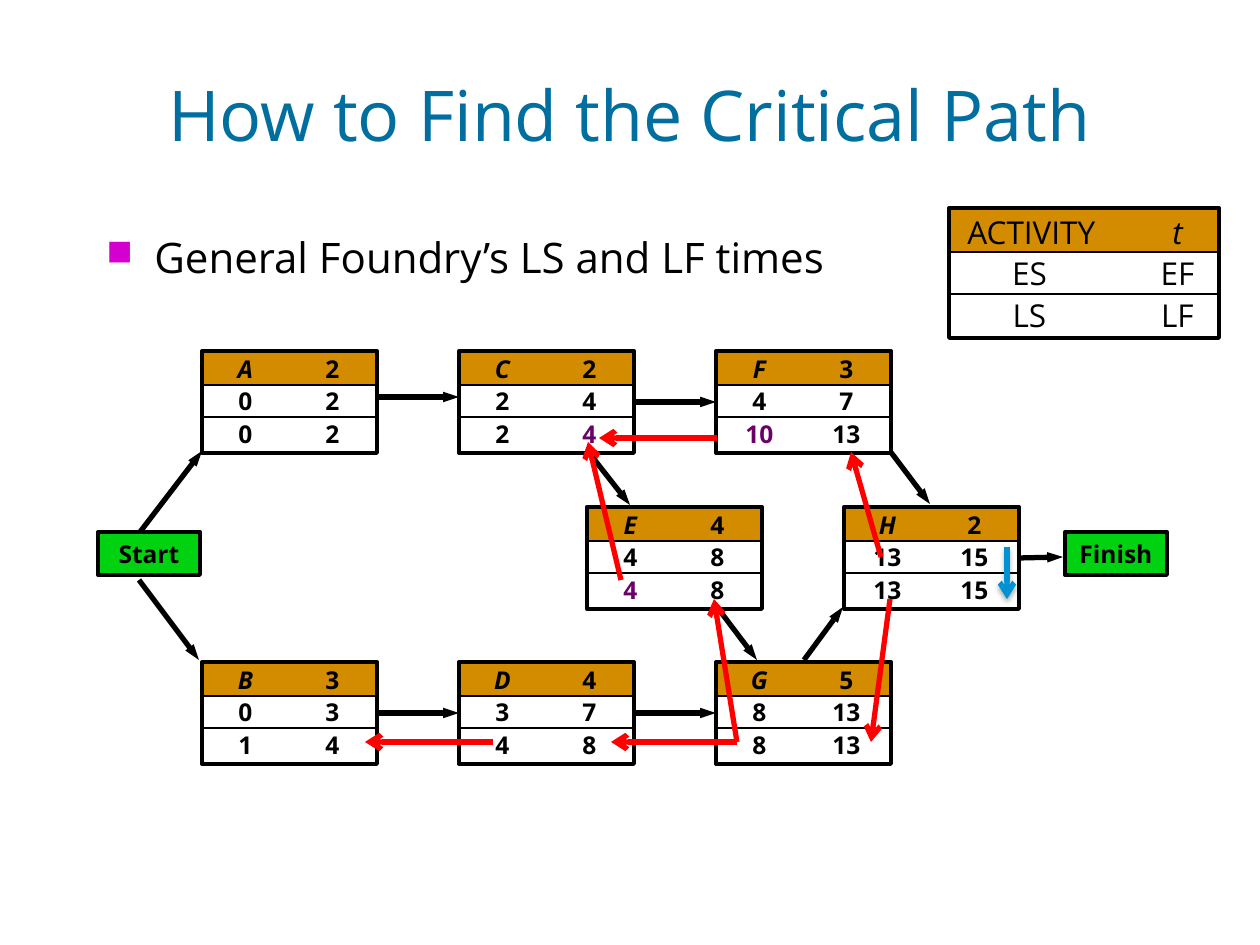
from lxml import etree
from pptx import Presentation
from pptx.dml.color import RGBColor
from pptx.enum.shapes import MSO_CONNECTOR, MSO_SHAPE
from pptx.enum.text import MSO_ANCHOR, PP_ALIGN
from pptx.oxml.ns import qn
from pptx.util import Emu, Pt

STRAIGHT = MSO_CONNECTOR.STRAIGHT
RECTANGLE = MSO_SHAPE.RECTANGLE
MIDDLE = MSO_ANCHOR.MIDDLE
CENTER = PP_ALIGN.CENTER
FONT = "Open Sans"
BLACK, ORANGE, GREEN, PURPLE = "000000", "D38B00", "00D211", "6A0068"
RED, BLUE, TEAL, MAGENTA = "FF0000", "0092D3", "006E9E", "D300D0"
LEFT, RIGHT = 1, 3

TITLE = "How to Find the Critical Path"
BULLET = "General Foundry’s LS and LF times"
# name: (column, row, cells)
ACTIVITIES = {
    "A": (0, 0, [("A", "2"), ("0", "2"), ("0", "2")]),
    "C": (2, 0, [("C", "2"), ("2", "4"), ("2", "4")]),
    "H": (5, 1, [("H", "2"), ("13", "15"), ("13", "15")]),
    "E": (3, 1, [("E", "4"), ("4", "8"), ("4", "8")]),
    "B": (0, 2, [("B", "3"), ("0", "3"), ("1", "4")]),
    "D": (2, 2, [("D", "4"), ("3", "7"), ("4", "8")]),
    "G": (4, 2, [("G", "5"), ("8", "13"), ("8", "13")]),
    "F": (4, 0, [("F", "3"), ("4", "7"), ("10", "13")]),
}
HIGHLIGHTS = {"C": (2, 1), "E": (2, 0), "F": (2, 0)}
LEGEND = [("ACTIVITY", "t"), ("ES", "EF"), ("LS", "LF")]
TERMINALS = [("Start", 98), ("Finish", 1065)]
JOINS = [("C", "F"), ("B", "D"), ("D", "G")]
FORWARD_ARROWS = [
    (140, 532, 202, 451), (139, 580, 199, 660), (377, 397, 459, 397),
    (590, 454, 630, 505), (717, 607, 757, 660), (890, 451, 930, 504),
    (804, 660, 843, 607),
]
FINISH_ARROW = (1019, 557, 1063, 557)
BACKWARD_ARROWS = [
    (890, 599, 871, 742), (737, 742, 611, 742), (493, 742, 365, 742),
    (737, 742, 714, 599), (881, 557, 851, 452), (621, 580, 588, 442),
    (717, 438, 599, 438),
]
LATEST_ARROW = (1007, 547, 1007, 599)
NODE_STYLE = dict(width=175, height=102, rules=(34, 66), size=14, tabs=(24, 111),
                  text_box=(7, -6, 156, 111), bold=True, italic=(0, 0))
LEGEND_STYLE = dict(width=270, height=130, rules=(44, 86), size=18, tabs=(62, 210),
                    text_box=(6, -5, 258, 137), bold=False, italic=(0, 1))


def px(value):
    return Emu(round(value * 914400 / 126))


def color(value):
    return RGBColor.from_string(value)


def set_font(font, size, value, bold=False):
    font.name, font.size, font.bold = FONT, Pt(size), bold
    font.color.rgb = color(value)


def add_box(slide, left, top, width, height, fill=None, outlined=False):
    shape = slide.shapes.add_shape(RECTANGLE, px(left), px(top), px(width), px(height))
    shape.shadow.inherit = False
    if fill:
        shape.fill.solid()
        shape.fill.fore_color.rgb = color(fill)
    else:
        shape.fill.background()
    if outlined:
        shape.line.color.rgb = color(BLACK)
        shape.line.width = Pt(2.25)
    else:
        shape.line.fill.background()
    return shape


def add_text_box(slide, left, top, width, height):
    frame = slide.shapes.add_textbox(px(left), px(top), px(width), px(height)).text_frame
    frame.word_wrap = True
    return frame


def add_line(slide, points, value=BLACK, width=1.5, head=None, head_width="med"):
    line = slide.shapes.add_connector(STRAIGHT, *map(px, points))
    line.line.color.rgb = color(value)
    line.line.width = Pt(width)
    if head:
        etree.SubElement(line.line._get_or_add_ln(), qn("a:tailEnd"),
                         type=head, w=head_width, len="med")
    etree.SubElement(line._element.spPr, qn("a:effectLst"))
    return line


def add_shadow(line):
    effects = line._element.spPr.find(qn("a:effectLst"))
    shadow = etree.SubElement(effects, qn("a:outerShdw"), blurRad=str(Pt(3.1)),
                              dist=str(Pt(1.8)), dir="5400000", rotWithShape="0")
    shade = etree.SubElement(shadow, qn("a:srgbClr"), val=BLACK)
    etree.SubElement(shade, qn("a:alpha"), val="35000")


def add_card(slide, left, top, cells, style, highlight=None):
    width, rules = style["width"], style["rules"]
    add_box(slide, left, top, width, rules[0], ORANGE)
    dx, dy, text_width, text_height = style["text_box"]
    frame = add_text_box(slide, left + dx, top + dy, text_width, text_height)
    for row, values in enumerate(cells):
        paragraph = frame.paragraphs[0] if row == 0 else frame.add_paragraph()
        paragraph.line_spacing = 1.1
        tabs = etree.SubElement(paragraph._p.get_or_add_pPr(), qn("a:tabLst"))
        for position in style["tabs"]:
            etree.SubElement(tabs, qn("a:tab"), pos=str(px(position)), algn="ctr")
        set_font(paragraph.font, style["size"], BLACK, style["bold"])
        for column, value in enumerate(values):
            run = paragraph.add_run()
            run.text = "\t" + value
            if (row, column) == style["italic"]:
                run.font.italic = True
            if (row, column) == highlight:
                run.font.color.rgb = color(PURPLE)
    frame_box = add_box(slide, left, top, width, style["height"], outlined=True)
    for rule in rules:
        add_line(slide, (left, top + rule, left + width, top + rule))
    return frame_box


def add_headings(slide):
    frame = add_text_box(slide, 94, 54, 1071, 130)
    frame.vertical_anchor = MIDDLE
    paragraph = frame.paragraphs[0]
    paragraph.text, paragraph.alignment, paragraph.line_spacing = TITLE, CENTER, 0.9
    set_font(paragraph.font, 40, TEAL)

    paragraph = add_text_box(slide, 94, 231, 1071, 67).paragraphs[0]
    paragraph.text, paragraph.line_spacing = BULLET, 0.9
    properties = paragraph._p.get_or_add_pPr()
    properties.set("marL", str(px(48)))
    properties.set("indent", str(px(-48)))
    bullet_color = etree.SubElement(properties, qn("a:buClr"))
    etree.SubElement(bullet_color, qn("a:srgbClr"), val=MAGENTA)
    etree.SubElement(properties, qn("a:buSzPct"), val="85000")
    etree.SubElement(properties, qn("a:buChar"), char="■")
    set_font(paragraph.font, 24, BLACK)


def main():
    """Build the critical path slide."""
    presentation = Presentation()
    presentation.slide_width, presentation.slide_height = px(1260), px(945)
    slide = presentation.slides.add_slide(presentation.slide_layouts[6])
    add_headings(slide)

    nodes = {}
    for name, (column, row, cells) in ACTIVITIES.items():
        left, top = round(202 + 128.4 * column), round(351 + 155.6 * row)
        nodes[name] = add_card(slide, left, top, cells, NODE_STYLE, HIGHLIGHTS.get(name))
    for label, left in TERMINALS:
        box = add_box(slide, left, 532, 102, 43, GREEN, outlined=True)
        box.text_frame.word_wrap = False
        box.text_frame.vertical_anchor = MIDDLE
        paragraph = box.text_frame.paragraphs[0]
        paragraph.text, paragraph.alignment = label, CENTER
        set_font(paragraph.font, 14, BLACK, bold=True)

    for points in FORWARD_ARROWS:
        add_line(slide, points, BLACK, 3, "triangle", "sm")
    for start, end in JOINS:
        arrow = add_line(slide, (0, 0, 0, 0), BLACK, 3, "triangle", "sm")
        arrow.begin_connect(nodes[start], RIGHT)
        arrow.end_connect(nodes[end], LEFT)
    finish_arrow = add_line(slide, FINISH_ARROW, BLACK, 3, "triangle", "sm")
    finish_arrow.begin_connect(nodes["H"], RIGHT)

    add_shadow(add_line(slide, LATEST_ARROW, BLUE, 3, "arrow"))
    for points in BACKWARD_ARROWS:
        add_line(slide, points, RED, 3, "arrow")
    add_card(slide, 949, 208, LEGEND, LEGEND_STYLE)
    presentation.save("out.pptx")


if __name__ == "__main__":
    main()
